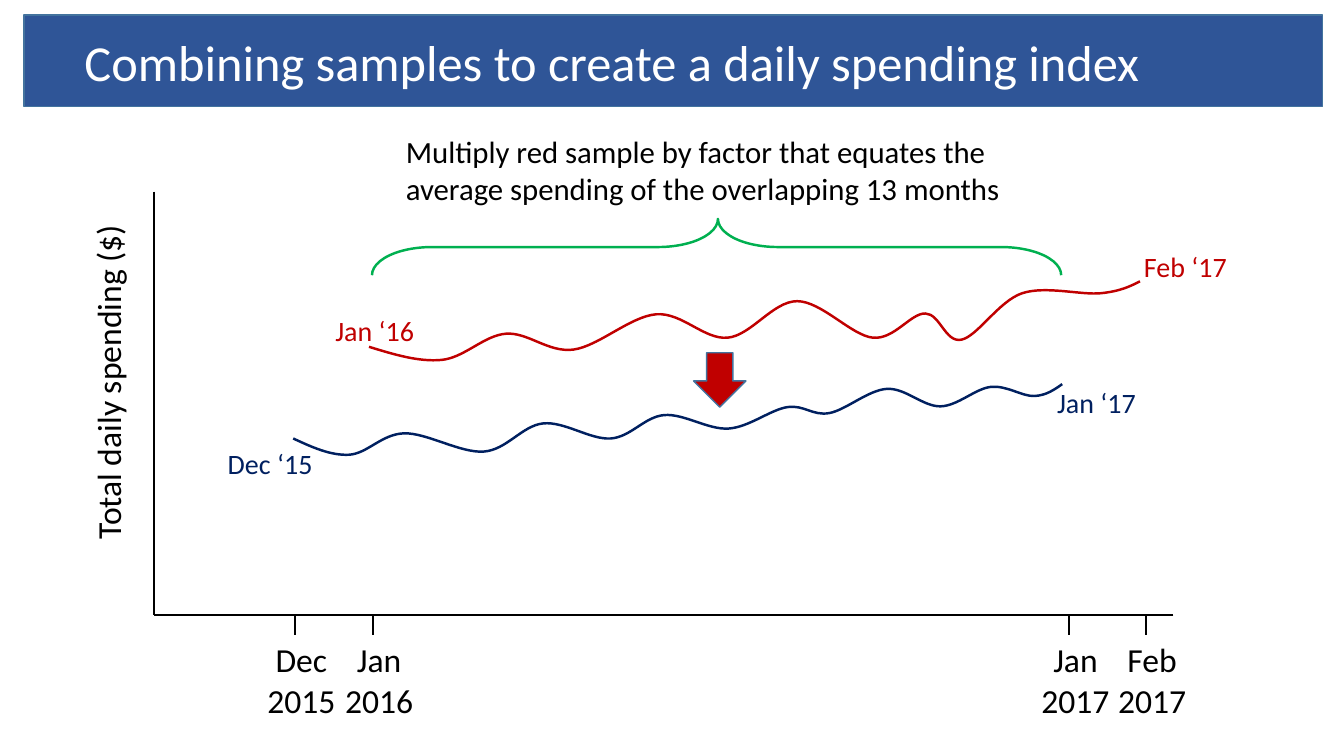
from lxml import etree
from pptx import Presentation
from pptx import util as u
from pptx.dml import color
from pptx.enum import shapes, text
from pptx.oxml import ns

BLACK, WHITE, NAVY, RED, GREEN = "000000", "FFFFFF", "002060", "C00000", "00B050"
BANNER_BLUE, EDGE_BLUE = "2F5597", "43739E"

AXIS_X, AXIS_TOP, AXIS_Y, AXIS_RIGHT = 3.89, 4.83, 15.49, 29.57
TICK_LENGTH = 0.5
TICKS = [
    (7.44, "Dec\n2015"),
    (9.4, "Jan\n2016"),
    (26.95, "Jan\n2017"),
    (28.88, "Feb\n2017"),
]
BLUE_SAMPLE = [
    (7.39, 11.05), (8.79, 11.46), (10.19, 10.92), (12.19, 11.38), (13.69, 10.67),
    (15.39, 11.05), (16.74, 10.46), (18.36, 10.8), (19.84, 10.26), (20.9, 10.41),
    (22.35, 9.8), (23.7, 10.24), (24.97, 9.75), (26.06, 9.98), (26.77, 9.68),
]
RED_SAMPLE = [
    (9.3, 8.74), (11.13, 9.07), (12.75, 8.41), (14.45, 8.81), (16.54, 7.92),
    (18.34, 8.51), (20.09, 7.59), (22, 8.51), (23.32, 7.9), (24.23, 8.56),
    (25.76, 7.39), (27.74, 7.39), (28.73, 7.09),
]
SAMPLE_ENDS = [
    ("Dec ‘15", (5.49, 11.13, 2.84, 1.12), NAVY),
    ("Jan ‘17", (26.39, 9.6, 2.49, 1.12), NAVY),
    ("Jan ‘16", (8.2, 7.77, 3.1, 1.12), RED),
    ("Feb ‘17", (28.58, 6.17, 3.1, 1.12), RED),
]


def rgb(value):
    return color.RGBColor.from_string(value)


def cm(values):
    return [u.Cm(value) for value in values]


def apply(target, formats):
    for name, value in formats.items():
        setattr(target, name, value)


def set_line(line, line_color, width):
    line.color.rgb = rgb(line_color)
    line.width = u.Pt(width)


def write(shape, words, size, font_color, align=text.PP_ALIGN.LEFT, **frame_formats):
    frame = shape.text_frame
    frame.text = words
    apply(frame, {"word_wrap": True, **frame_formats})
    for paragraph in frame.paragraphs:
        paragraph.alignment = align
        apply(paragraph.font, {"name": "Calibri", "size": u.Pt(size)})
        paragraph.font.color.rgb = rgb(font_color)


def add_label(slide, words, box, size, font_color=BLACK, rotation=0, **formats):
    shape = slide.shapes.add_textbox(*cm(box))
    shape.rotation = rotation
    write(shape, words, size, font_color, **formats)


def add_preset(slide, kind, box, fill, line_color, width, rotation=0):
    shape = slide.shapes.add_shape(kind, *cm(box))
    apply(shape, {"rotation": rotation})
    shape.shadow.inherit = False
    if fill:
        shape.fill.solid()
        shape.fill.fore_color.rgb = rgb(fill)
    else:
        shape.fill.background()
    set_line(shape.line, line_color, width)
    return shape


def add_rule(slide, *ends):
    line = slide.shapes.add_connector(shapes.MSO_CONNECTOR.STRAIGHT, *cm(ends))
    set_line(line.line, BLACK, 1.5)
    etree.SubElement(line._element.spPr, ns.qn("a:effectLst"))


def blend(start, end, share):
    return tuple(a + (b - a) * share for a, b in zip(start, end))


def bezier_segments(knots):
    slopes = [
        tuple((b - a) / 6 for a, b in zip(before, after))
        for before, after in zip(knots, knots[2:])
    ]
    last = len(knots) - 1
    for i in range(last):
        start, end = knots[i], knots[i + 1]
        leave = tuple(p + s for p, s in zip(start, slopes[i - 1])) if i else None
        arrive = tuple(p - s for p, s in zip(end, slopes[i])) if i + 1 < last else None
        leave = leave or blend(start, arrive, 0.5)
        arrive = arrive or blend(leave, end, 0.5)
        yield leave, arrive, end


def add_curve(slide, knots, line_color):
    points = [tuple(cm(knot)) for knot in knots]
    builder = slide.shapes.build_freeform(*points[0])
    builder.add_line_segments(points[1:], close=False)
    shape = builder.convert_to_shape()
    shape.shadow.inherit = False
    shape.fill.background()
    set_line(shape.line, line_color, 1.75)
    outline = shape._element.spPr.find(".//" + ns.qn("a:path"))
    local = [(int(p.get("x")), int(p.get("y"))) for p in outline.iter(ns.qn("a:pt"))]
    for segment, controls in zip(outline.findall(ns.qn("a:lnTo")), bezier_segments(local)):
        curve = etree.Element(ns.qn("a:cubicBezTo"))
        for x, y in controls:
            etree.SubElement(curve, ns.qn("a:pt"), x=str(round(x)), y=str(round(y)))
        outline.replace(segment, curve)


def add_banner(slide):
    banner = add_preset(slide, shapes.MSO_SHAPE.RECTANGLE,
                        (0.61, 0.38, 32.72, 2.31), BANNER_BLUE, EDGE_BLUE, 1)
    write(banner, "Combining samples to create a daily spending index", 36, WHITE,
          margin_left=u.Cm(1.52), vertical_anchor=text.MSO_ANCHOR.MIDDLE)


def add_axes(slide):
    add_rule(slide, AXIS_X, AXIS_TOP, AXIS_X, AXIS_Y)
    add_rule(slide, AXIS_RIGHT, AXIS_Y, AXIS_X, AXIS_Y)
    for x, month in TICKS:
        add_rule(slide, x, AXIS_Y, x, AXIS_Y + TICK_LENGTH)
        add_label(slide, month, (x - 1.1, 15.98, 2.51, 2.31), 24,
                  align=text.PP_ALIGN.CENTER)
    add_label(slide, "Total daily spending ($)", (-2.44, 8.05, 10.31, 1.27), 24,
              rotation=270)


def add_scaling_note(slide):
    add_preset(slide, shapes.MSO_SHAPE.DOWN_ARROW,
               (17.48, 8.89, 1.32, 1.37), RED, EDGE_BLUE, 1)
    brace = add_preset(slide, shapes.MSO_SHAPE.RIGHT_BRACE,
                       (17.35, -2.46, 1.42, 17.37), None, GREEN, 1.75, rotation=270)
    brace.adjustments[0] = 1.065
    brace.adjustments[1] = 0.502
    add_label(slide, "Multiply red sample by factor that equates the "
              "average spending of the overlapping 13 months",
              (9.98, 3.23, 16.76, 2.13), 22)


def main():
    presentation = Presentation()
    apply(presentation, {"slide_width": u.Cm(33.87), "slide_height": u.Cm(19.05)})
    slide = presentation.slides.add_slide(presentation.slide_layouts[6])
    add_banner(slide)
    add_axes(slide)
    add_curve(slide, BLUE_SAMPLE, NAVY)
    add_curve(slide, RED_SAMPLE, RED)
    for words, box, font_color in SAMPLE_ENDS:
        add_label(slide, words, box, 20, font_color)
    add_scaling_note(slide)
    presentation.save("out.pptx")


if __name__ == "__main__":
    main()
